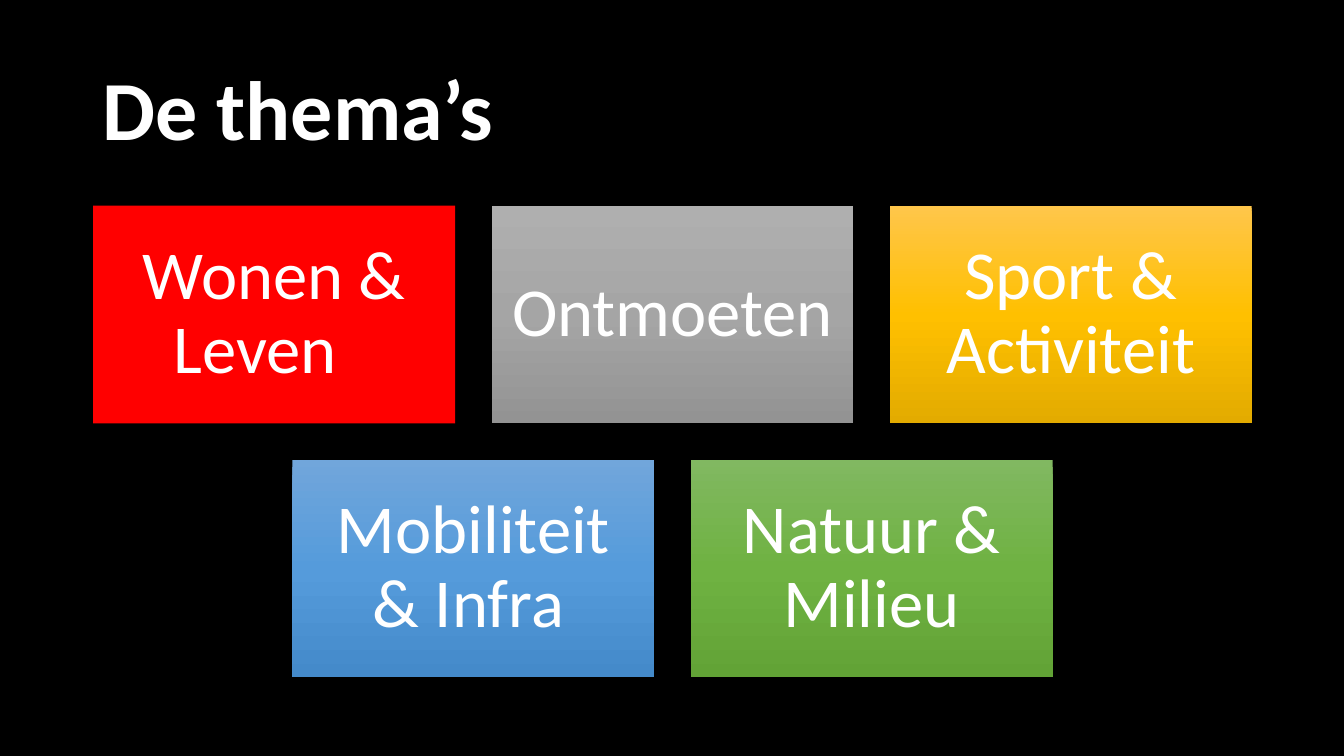
from copy import deepcopy

from pptx import Presentation
from pptx.dml.color import RGBColor
from pptx.enum.shapes import MSO_SHAPE
from pptx.enum.text import MSO_ANCHOR, PP_ALIGN
from pptx.oxml.ns import qn
from pptx.util import Inches, Pt

RECTANGLE = MSO_SHAPE.RECTANGLE
MIDDLE = MSO_ANCHOR.MIDDLE
LEFT, CENTER = PP_ALIGN.LEFT, PP_ALIGN.CENTER

COLORS = {"background": "000000", "text": "FFFFFF"}
TILE_COLORS = {
    "red": ["FF0000"],
    "gray": ["AFAFAF", "A5A5A5", "939393"],
    "gold": ["FFC64B", "FFC000", "E3AB00"],
    "blue": ["71A6DB", "559BDB", "448ACA"],
    "green": ["81B861", "6FB242", "62A336"],
}
# A closing tab shifts the centred last line to the left.
THEME_ROWS = [
    [("Wonen & Leven\t", "red"), ("Ontmoeten", "gray"), ("Sport & Activiteit", "gold")],
    [("Mobiliteit & Infra\t", "blue"), ("Natuur & Milieu", "green")],
]
TILE_WIDTH, TILE_HEIGHT, TILE_GAP = 3.59, 2.16, 0.36
TILE_INSET = 0.2


def write_text(shape, text, size, align, bold=False):
    frame = shape.text_frame
    frame.word_wrap = True
    frame.vertical_anchor = MIDDLE
    para = frame.paragraphs[0]
    para.text = text
    para.alignment = align
    para.line_spacing = 0.9
    para.font.name = "Calibri"
    para.font.size = Pt(size)
    para.font.bold = bold
    para.font.color.rgb = RGBColor.from_string(COLORS["text"])


def fill_tile(tile, colors):
    """Fill with one colour, or with evenly spaced stops from top to bottom."""
    if len(colors) == 1:
        tile.fill.solid()
        tile.fill.fore_color.rgb = RGBColor.from_string(colors[0])
        return
    tile.fill.gradient()
    tile.fill.gradient_angle = 270
    stop_list = next(tile._element.iter(qn("a:gsLst")))
    while len(stop_list) < len(colors):
        stop_list.append(deepcopy(stop_list[0]))
    for index, (stop, color) in enumerate(zip(tile.fill.gradient_stops, colors)):
        stop.position = index / (len(colors) - 1)
        stop.color.rgb = RGBColor.from_string(color)


def add_title(page, left, top, width, height):
    box = page.shapes.add_textbox(
        Inches(left), Inches(top), Inches(width), Inches(height))
    write_text(box, "De thema’s", 60, LEFT, bold=True)


def add_tile(page, left, top, text, colors):
    tile = page.shapes.add_shape(
        RECTANGLE, Inches(left), Inches(top), Inches(TILE_WIDTH), Inches(TILE_HEIGHT))
    tile.shadow.inherit = False
    tile.line.fill.background()
    fill_tile(tile, colors)
    write_text(tile, text, 49, CENTER)
    frame = tile.text_frame
    frame.margin_left = frame.margin_right = Inches(TILE_INSET)
    frame.margin_top = frame.margin_bottom = Inches(TILE_INSET)


def add_theme_grid(page, left, top, width):
    """Place the rows of tiles, each row centred in the width."""
    for row, themes in enumerate(THEME_ROWS):
        row_width = len(themes) * (TILE_WIDTH + TILE_GAP) - TILE_GAP
        row_left = left + (width - row_width) / 2
        row_top = top + row * (TILE_HEIGHT + TILE_GAP)
        for column, (text, color) in enumerate(themes):
            tile_left = row_left + column * (TILE_WIDTH + TILE_GAP)
            add_tile(page, tile_left, row_top, text, TILE_COLORS[color])


def main():
    deck = Presentation()
    deck.slide_width, deck.slide_height = Inches(13.33), Inches(7.5)
    page = deck.slides.add_slide(deck.slide_layouts[6])
    page.background.fill.solid()
    page.background.fill.fore_color.rgb = RGBColor.from_string(COLORS["background"])
    add_title(page, 0.92, 0.4, 11.5, 1.45)
    add_theme_grid(page, 0.92, 2.04, 11.5)
    deck.save("out.pptx")


if __name__ == "__main__":
    main()
